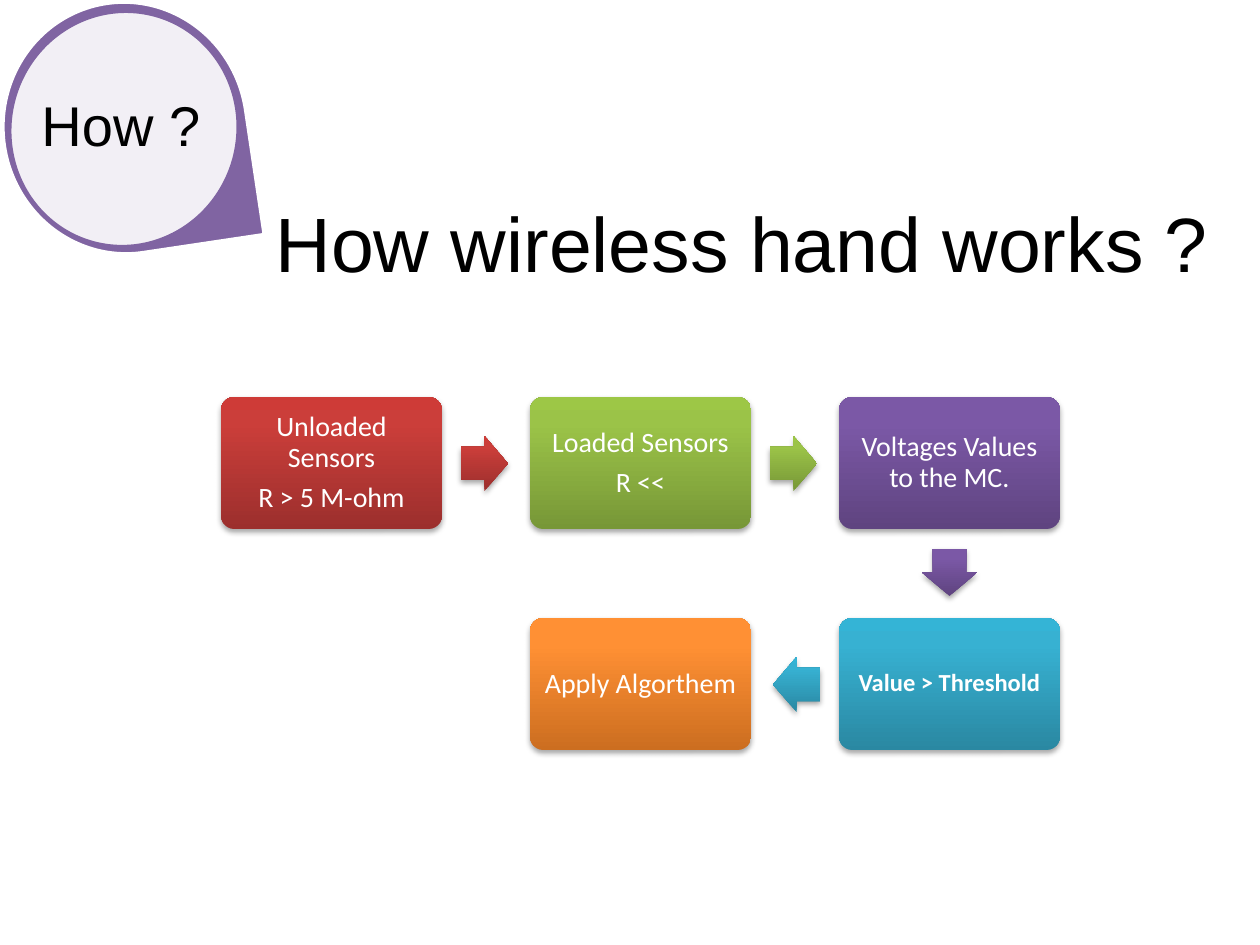
from lxml import etree
from pptx import Presentation
from pptx.dml.color import RGBColor as RGB
from pptx.enum.shapes import MSO_SHAPE as SHAPE
from pptx.enum.text import MSO_ANCHOR as ANCHOR, PP_ALIGN as ALIGN
from pptx.oxml import parse_xml
from pptx.oxml.ns import nsdecls, qn
from pptx.util import Pt

PX = 914400 / 126
HUES = {  # bottom, upper and top colour of each step
    "red": ("9C2F2D", "CB3E3A", "CE3B37"),
    "green": ("779737", "9BC348", "9DC746"),
    "purple": ("5F4480", "7B58A6", "7C57A8"),
    "blue": ("2A88A2", "37B1D2", "34B4D6"),
    "orange": ("CC6E20", "FF9034", "FF9136"),
}
COLORS = {"white": "FFFFFF", "black": "000000", "badge": "8064A2"}

deck = Presentation()
deck.slide_width, deck.slide_height = round(1260 * PX), round(945 * PX)
slide = deck.slides.add_slide(deck.slide_layouts[6])
shapes = slide.shapes


def add(kind, x, y, w, h, hue=None):
    """Add a preset shape, or a text box if kind is None; a hue adds gradient and shadow."""
    area = [round(n * PX) for n in (x, y, w, h)]
    if kind is None:
        return shapes.add_textbox(*area)
    shape = shapes.add_shape(kind, *area)
    shape.shadow.inherit = False
    if hue:
        shape.line.fill.background()
        stops = "".join(
            f'<a:gs pos="{pos}"><a:srgbClr val="{tone}"/></a:gs>'
            for pos, tone in zip((0, 80000, 100000), HUES[hue]))
        props = shape._element.spPr
        props.find(qn("a:prstGeom")).addnext(parse_xml(
            f'<a:gradFill {nsdecls("a")} rotWithShape="0"><a:gsLst>{stops}</a:gsLst>'
            '<a:lin ang="16200000" scaled="0"/></a:gradFill>'))
        props.find(qn("a:effectLst")).append(parse_xml(
            f'<a:outerShdw {nsdecls("a")} blurRad="40000" dist="23000" dir="5400000"'
            ' rotWithShape="0"><a:srgbClr val="000000"><a:alpha val="35000"/>'
            '</a:srgbClr></a:outerShdw>'))
    return shape


def write(shape, text, size, font, color, inset=None, bold=False):
    """Set the text; an inset in px also centres it both ways."""
    frame = shape.text_frame
    frame.word_wrap = True
    frame.text = text
    if inset is not None:
        frame.vertical_anchor = ANCHOR.MIDDLE
        frame.margin_left = frame.margin_right = round(inset * PX)
        frame.margin_top = frame.margin_bottom = round(inset * PX)
    for para in frame.paragraphs:
        if inset is not None:
            para.alignment = ALIGN.CENTER
            para.line_spacing = 0.9
            para.space_after = Pt(round(size * 0.35, 1))
        for run in para.runs:
            run.font.size = Pt(size)
            run.font.name = font
            run.font.bold = bold
            run.font.color.rgb = RGB.from_string(COLORS[color])


# Flow of steps: column, row, hue, text, size, bold
LEFT, TOP, WIDE, HIGH = 221, 397, 221, 132
STEP_X, STEP_Y = 309, 221
steps = [
    (0, 0, "red", "Unloaded Sensors\nR > 5 M-ohm", 16, False),
    (1, 0, "green", "Loaded Sensors\nR <<", 16, False),
    (2, 0, "purple", "Voltages Values to the MC.", 16, False),
    (2, 1, "blue", "Value > Threshold", 14, True),
    (1, 1, "orange", "Apply Algorthem", 16, False),
]
for col, row, hue, text, size, bold in steps:
    box = add(SHAPE.ROUNDED_RECTANGLE, LEFT + col * STEP_X, TOP + row * STEP_Y, WIDE, HIGH, hue)
    box.adjustments[0] = 0.1
    write(box, text, size, "Calibri", "white", 9, bold)

# Arrows between the steps: left, top, turn, hue
arrows = [
    (461, 436, 0, "red"),
    (770, 436, 0, "green"),
    (926, 545, 90, "purple"),
    (773, 657, 180, "blue"),
]
for x, y, turn, hue in arrows:
    arrow = add(SHAPE.RIGHT_ARROW, x, y, 47, 55, hue)
    arrow.adjustments[0], arrow.adjustments[1] = 0.6, 0.5
    arrow.rotation = turn

# Badge in the corner
drop = add(SHAPE.TEAR, -1, 6, 252, 244)
drop.rotation = 81.5
disc = add(SHAPE.OVAL, 10, 11, 228, 236)
disc.rotation = 15.1
for shape, fill, line in ((drop, "badge", "white"), (disc, "white", "badge")):
    shape.fill.solid()
    shape.fill.fore_color.rgb = RGB.from_string(COLORS[fill])
    shape.line.color.rgb = RGB.from_string(COLORS[line])
    shape.line.width = Pt(2)
tint = disc._element.spPr.find(qn("a:solidFill"))[0]
etree.SubElement(tint, qn("a:alpha")).set("val", "90000")

label = add(None, 0, 44, 242, 168)
write(label, "How ?", 32, "Arial", "black", 4)

title = add(None, 263, 189, 987, 106)
write(title, "How wireless hand works ?", 44, "Arial", "black")

deck.save("out.pptx")
